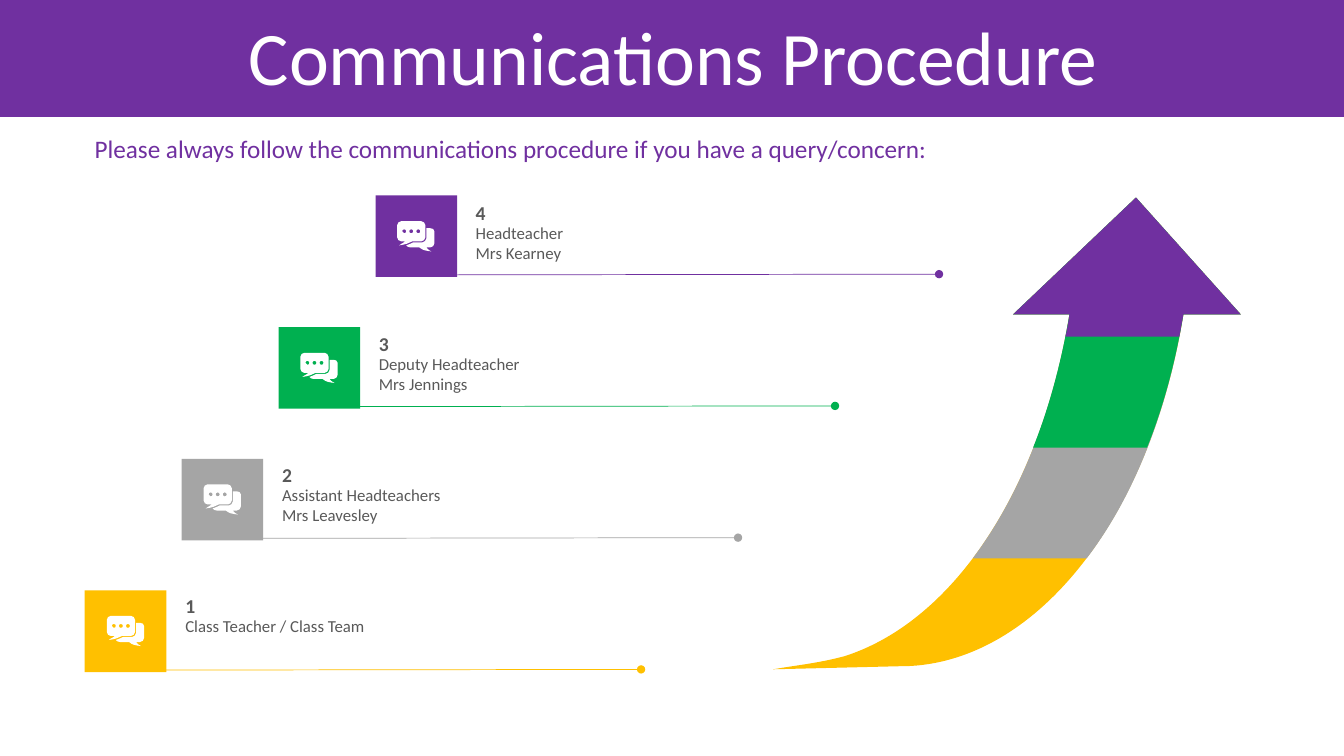
from dataclasses import dataclass

from lxml.etree import SubElement
from pptx import Presentation
from pptx.dml.color import RGBColor
from pptx.enum.shapes import MSO_CONNECTOR, MSO_SHAPE
from pptx.enum.text import MSO_ANCHOR, MSO_AUTO_SIZE, PP_ALIGN
from pptx.oxml.ns import qn
from pptx.shapes.autoshape import Shape
from pptx.shapes.shapetree import SlideShapes
from pptx.text.text import TextFrame
from pptx.util import Emu, Inches, Pt

Outline = tuple[tuple[float, ...], ...]

CELL = Inches(0.1)
COLUMNS, ROWS = 133.33, 75
FONT = "Calibri"
PURPLE, GREEN, GREY, YELLOW = "7030A0", "00B050", "A5A5A5", "FFC000"
WHITE, BODY = "FFFFFF", "595959"
BADGE = 8.1


@dataclass(frozen=True)
class Step:
    roles: tuple[str, ...]
    color: str
    band: Outline
    rule_start: float = 7.4


STEPS = (
    Step(("Class Teacher / Class Team",), YELLOW, (
        (114, 52.1, 102.2, 66.2, 89.2, 66.1), (76.7, 66.4),
        (79, 66, 81.2, 65.8, 83.8, 65.1), (94.7, 61.6, 103.3, 48.4, 106.1, 31.2))),
    Step(("Assistant Headteachers", "Mrs Leavesley"), GREY, (
        (115.8, 41, 112.4, 49.4, 107.8, 55.4), (96.5, 55.4),
        (101.1, 49.3, 104.5, 40.9, 106.1, 31.2))),
    Step(("Deputy Headteacher", "Mrs Jennings"), GREEN, (
        (116.6, 36, 115.4, 40.4, 113.8, 44.4), (102.5, 44.4),
        (104.1, 40.4, 105.3, 35.9, 106.1, 31.2))),
    Step(("Headteacher", "Mrs Kearney"), PURPLE, (
        (117, 33.4), (105.7, 33.4), (105.9, 32.6, 106, 31.9, 106.1, 31.2)), 8.1),
)
ARROW_HEAD = ((100.5, 31.2), (112.7, 19.6), (123.1, 31.2), (117.4, 31.2))
BACK_BUBBLE = (
    (2.9, 0.7), (3.3, 0.7), (3.5, 0.7, 3.7, 0.8, 3.7, 1),
    (3.7, 2.2), (3.7, 2.4, 3.5, 2.6, 3.3, 2.6),
    (2.9, 2.6), (3, 2.7, 3, 2.8, 3.4, 3), (2.7, 2.9, 2.6, 2.9, 2.2, 2.6),
    (1.3, 2.6), (1.1, 2.6, 1, 2.5, 0.9, 2.4), (1.2, 2.3, 1.4, 2.2, 1.6, 2.1),
    (2.5, 2.1), (2.7, 2.1, 2.9, 1.9, 2.9, 1.7),
)
FRONT_BUBBLE = (
    (0.4, 0), (2.4, 0), (2.6, 0, 2.8, 0.2, 2.8, 0.4),
    (2.8, 1.6), (2.8, 1.8, 2.6, 2, 2.4, 2),
    (1.5, 2), (1.1, 2.2, 0.9, 2.3, 0.2, 2.4), (0.6, 2.1, 0.6, 2.2, 0.8, 2),
    (0.4, 2), (0.2, 2, 0, 1.8, 0, 1.6),
    (0, 0.4), (0, 0.2, 0.2, 0, 0.4, 0),
)


def cells(count: float) -> Emu:
    return Emu(round(count * CELL))


def rgb(color: str) -> RGBColor:
    return RGBColor.from_string(color)


def dot(x: float, y: float) -> Outline:
    far, near = 0.2, 0.11
    return (
        (x, y - far),
        (x - near, y - far, x - far, y - near, x - far, y),
        (x - far, y + near, x - near, y + far, x, y + far),
        (x + near, y + far, x + far, y + near, x + far, y),
        (x + far, y - near, x + near, y - far, x, y - far),
    )


def paint(shape: Shape, color: str) -> None:
    shape.shadow.inherit = False
    shape.fill.solid()
    shape.fill.fore_color.rgb = rgb(color)
    shape.line.fill.background()


def draw_block(shapes: SlideShapes, left: float, top: float, width: float,
               height: float, color: str) -> Shape:
    block = shapes.add_shape(MSO_SHAPE.RECTANGLE, *map(cells, (left, top, width, height)))
    paint(block, color)
    return block


def bend(shape: Shape, outlines: tuple[Outline, ...]) -> None:
    lines = iter(list(shape.element.iter(qn("a:lnTo"))))
    for outline in outlines:
        for segment in outline[1:]:
            curve = next(lines)
            if len(segment) == 6:
                curve.tag = qn("a:cubicBezTo")
                for line in (next(lines), next(lines)):
                    curve.append(line[0])
                    line.getparent().remove(line)


def draw_outlines(shapes: SlideShapes, outlines: tuple[Outline, ...], color: str,
                  left: float = 0, top: float = 0) -> None:
    placed = [[(cells(left + x), cells(top + y)) for segment in outline
               for x, y in zip(segment[::2], segment[1::2])]
              for outline in outlines]
    builder = shapes.build_freeform(*placed[0][0])
    for index, points in enumerate(placed):
        if index:
            builder.move_to(*points[0])
        builder.add_line_segments(points[1:], close=True)
    shape = builder.convert_to_shape()
    bend(shape, outlines)
    paint(shape, color)


def write(frame: TextFrame, lines: tuple[str, ...], size: float, color: str,
          bold: bool = False) -> None:
    frame.word_wrap = True
    for index, line in enumerate(lines):
        paragraph = frame.add_paragraph() if index else frame.paragraphs[0]
        paragraph.text = line
        paragraph.font.name = FONT
        paragraph.font.size = Pt(size)
        paragraph.font.bold = bold
        paragraph.font.color.rgb = rgb(color)


def draw_text(shapes: SlideShapes, left: float, top: float, width: float, height: float,
              lines: tuple[str, ...], size: float, color: str, bold: bool = False) -> None:
    frame = shapes.add_textbox(*map(cells, (left, top, width, height))).text_frame
    write(frame, lines, size, color, bold)
    frame.auto_size = MSO_AUTO_SIZE.SHAPE_TO_FIT_TEXT


def draw_rule(shapes: SlideShapes, left: float, top: float, color: str) -> None:
    rule = shapes.add_connector(
        MSO_CONNECTOR.STRAIGHT, cells(left), cells(top), cells(left + 47.8), cells(top - 0.07))
    rule.line.color.rgb = rgb(color)
    rule.line.width = Pt(0.5)
    SubElement(rule.line._get_or_add_ln(), qn("a:tailEnd"), type="oval")
    SubElement(rule._element.spPr, qn("a:effectLst"))


def draw_step(shapes: SlideShapes, index: int, step: Step) -> None:
    left, top = 8.4 + 9.62 * index, 58.58 - 13.07 * index
    draw_rule(shapes, left + step.rule_start, top + 7.9, step.color)
    draw_block(shapes, left, top, BADGE, BADGE, step.color)
    dots = tuple(dot(x, 1) for x in (2.1, 1.4, 0.7))
    draw_outlines(shapes, (*dots, BACK_BUBBLE, FRONT_BUBBLE), WHITE,
                  10.6 + 9.6 * index, 61.1 - 13.05 * index)
    text_left, text_top = 17.4 + 9.6 * index, 58.4 - 13 * index
    draw_text(shapes, text_left, text_top + 2.22, 47, 1 + 2 * len(step.roles),
              step.roles, 12, BODY)
    draw_text(shapes, text_left, text_top, 47, 3.4, (str(index + 1),), 14, BODY, True)


def draw_title(shapes: SlideShapes) -> None:
    title = shapes.title
    title.left, title.top, title.width, title.height = map(cells, (3.5, 2.1, 126.6, 7.9))
    write(title.text_frame, ("Communications Procedure",), 54, WHITE)
    title.text_frame.vertical_anchor = MSO_ANCHOR.MIDDLE
    title.text_frame.auto_size = MSO_AUTO_SIZE.NONE
    heading = title.text_frame.paragraphs[0]
    heading.alignment = PP_ALIGN.CENTER
    heading.line_spacing = 0.9
    heading.space_before = Pt(10)
    banner = draw_block(shapes, 0, 0, COLUMNS, 11.6, PURPLE)
    title.element.addprevious(banner.element)


def main() -> None:
    presentation = Presentation()
    presentation.slide_width = cells(COLUMNS)
    presentation.slide_height = cells(ROWS)
    shapes = presentation.slides.add_slide(presentation.slide_layouts[5]).shapes
    draw_title(shapes)
    draw_text(
        shapes, 8.4, 12.7, 118, 4,
        ("Please always follow the communications procedure if you have a query/concern:",),
        18, PURPLE)
    for index, step in enumerate(STEPS):
        draw_step(shapes, index, step)
    for step in STEPS:
        draw_outlines(shapes, (ARROW_HEAD + step.band,), step.color)
    presentation.save("out.pptx")


if __name__ == "__main__":
    main()
